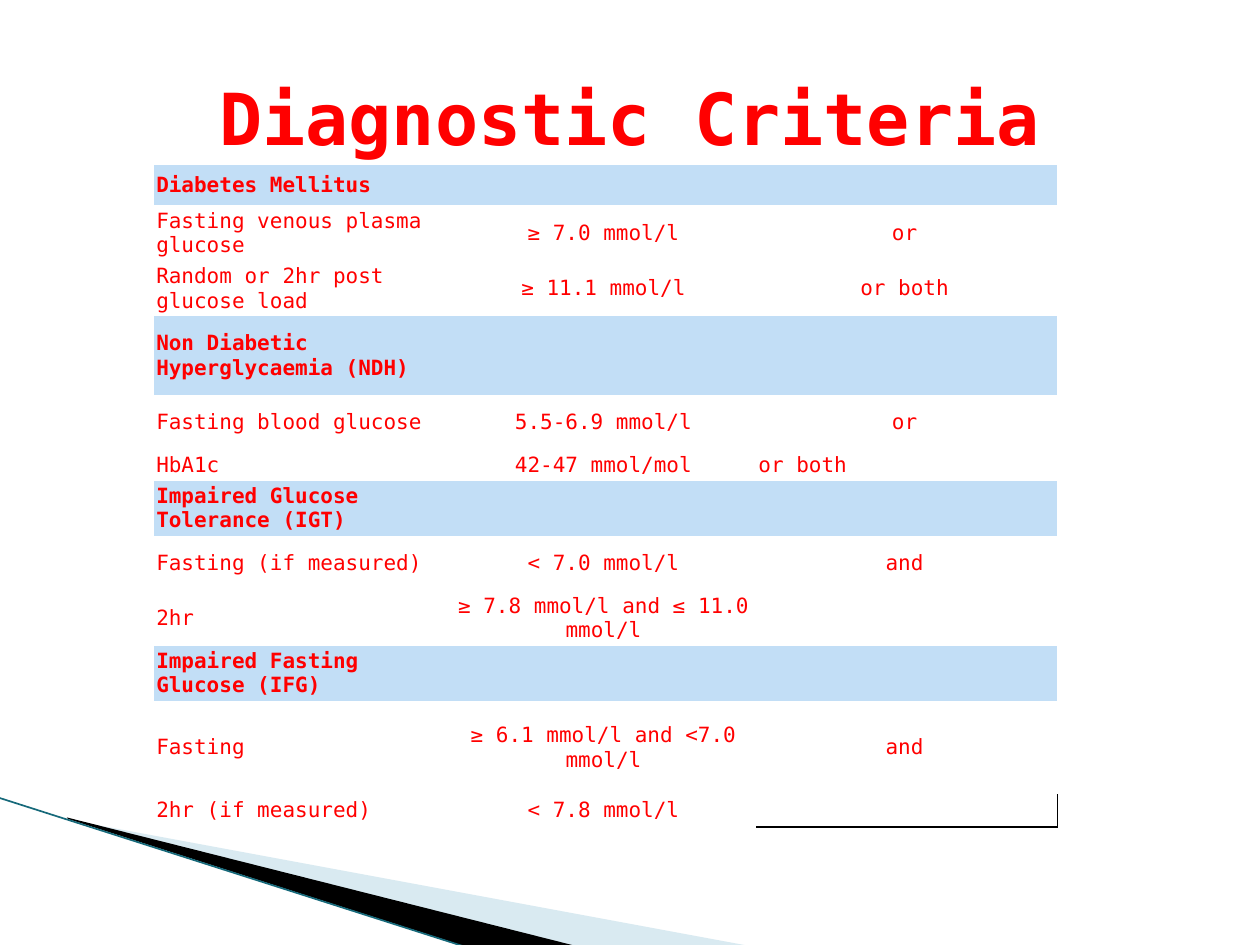
from dataclasses import dataclass

from lxml.etree import SubElement
from pptx import Presentation
from pptx.dml.color import RGBColor
from pptx.enum.shapes import MSO_CONNECTOR
from pptx.enum.text import MSO_ANCHOR, PP_ALIGN
from pptx.oxml.ns import qn
from pptx.util import Cm, Pt

NO_GRID_STYLE = "{2D5ABB26-0587-4C30-8999-92F81FD0307C}"


@dataclass(frozen=True)
class Theme:
    font: str = "DejaVu Sans Mono"
    title_size: float = 41
    body_size: float = 12
    text: str = "FF0000"
    section: str = "C2DEF6"
    plain: str = "FFFFFF"
    dark: str = "000000"
    wedge: str = "A0CBDC"
    edge: str = "16697A"


class SlideBuilder:
    def __init__(self, slide, theme):
        self.slide = slide
        self.theme = theme

    def style(self, paragraph, size, bold=False, align=PP_ALIGN.LEFT):
        paragraph.alignment = align
        font = paragraph.font
        font.name, font.size, font.bold = self.theme.font, Pt(size), bold
        font.color.rgb = RGBColor.from_string(self.theme.text)

    def wedge(self, points, color, opacity=100):
        start, *rest = [(Cm(x), Cm(y)) for x, y in points]
        builder = self.slide.shapes.build_freeform(*start)
        builder.add_line_segments(rest, close=True)
        wedge = builder.convert_to_shape()
        wedge.shadow.inherit = False
        wedge.line.fill.background()
        wedge.fill.solid()
        wedge.fill.fore_color.rgb = RGBColor.from_string(color)
        if opacity < 100:
            tint = next(wedge.fill._xPr.iter(qn("a:srgbClr")))
            SubElement(tint, qn("a:alpha"), val=str(opacity * 1000))

    def line(self, start, end, color, width):
        ends = [Cm(value) for value in (*start, *end)]
        line = self.slide.shapes.add_connector(MSO_CONNECTOR.STRAIGHT, *ends)
        line.line.color.rgb = RGBColor.from_string(color)
        line.line.width = Pt(width)
        SubElement(line._element.spPr, qn("a:effectLst"))

    def title(self, text, left, top, width, height):
        box = self.slide.shapes.add_textbox(Cm(left), Cm(top), Cm(width), Cm(height))
        frame = box.text_frame
        frame.word_wrap = True
        frame.vertical_anchor = MSO_ANCHOR.MIDDLE
        frame.text = text
        self.style(frame.paragraphs[0], self.theme.title_size, True, PP_ALIGN.CENTER)

    def table(self, rows, left, top, column_width, heights):
        """Rows with a single text are section headings."""
        columns = max(map(len, rows))
        table = self.slide.shapes.add_table(
            len(rows), columns, Cm(left), Cm(top),
            Cm(column_width * columns), Cm(sum(heights))).table
        table.first_row = table.horz_banding = False
        next(table._tbl.iter(qn("a:tableStyleId"))).text = NO_GRID_STYLE
        for column in table.columns:
            column.width = Cm(column_width)
        for r, (texts, height) in enumerate(zip(rows, heights)):
            table.rows[r].height = Cm(height)
            heading = len(texts) == 1
            for c in range(columns):
                text = texts[c] if c < len(texts) else ""
                self.cell(table.cell(r, c), text, heading, centred=c > 0)
        return table

    def cell(self, cell, text, heading, centred):
        cell.margin_left = cell.margin_top = cell.margin_bottom = Cm(0.05)
        cell.margin_right = Cm(0.13)
        cell.vertical_anchor = MSO_ANCHOR.MIDDLE
        cell.fill.solid()
        fill = self.theme.section if heading else self.theme.plain
        cell.fill.fore_color.rgb = RGBColor.from_string(fill)
        cell.text = text
        paragraph = cell.text_frame.paragraphs[0]
        if text:
            align = PP_ALIGN.CENTER if centred else PP_ALIGN.LEFT
            self.style(paragraph, self.theme.body_size, heading, align)
        else:
            # An empty cell takes its line height from the end mark
            SubElement(paragraph._p, qn("a:endParaRPr"), sz=str(self.theme.body_size * 100))

    def borders(self, cell, widths):
        properties = cell._tc.get_or_add_tcPr()
        for position, (side, width) in enumerate(widths.items()):
            border = SubElement(properties, qn(f"a:{side}"), w=str(Pt(width)))
            fill = SubElement(border, qn("a:solidFill"))
            SubElement(fill, qn("a:srgbClr"), val=self.theme.dark)
            properties.insert(position, border)


CRITERIA = [
    ["Diabetes Mellitus"],
    ["Fasting venous plasma glucose", "≥ 7.0 mmol/l", "or"],
    ["Random or 2hr post glucose load", "≥ 11.1 mmol/l", "or both"],
    ["Non Diabetic Hyperglycaemia (NDH)"],
    ["Fasting blood glucose", "5.5-6.9 mmol/l", "or"],
    ["HbA1c", "42-47 mmol/mol", "or both"],
    ["Impaired Glucose Tolerance (IGT)"],
    ["Fasting (if measured)", "< 7.0 mmol/l", "and"],
    ["2hr", "≥ 7.8 mmol/l and ≤ 11.0 mmol/l"],
    ["Impaired Fasting Glucose (IFG)"],
    ["Fasting", "≥ 6.1 mmol/l and <7.0 mmol/l", "and"],
    ["2hr (if measured)", "< 7.8 mmol/l"],
]
ROW_HEIGHTS = [0.81, 1.12, 1.12, 1.59, 1.1, 0.62, 1.11, 1.1, 1.12, 1.11, 1.88, 0.66]
HBA1C_ROW = 5


def main():
    presentation = Presentation()
    presentation.slide_width, presentation.slide_height = Cm(25.4), Cm(19.05)
    theme = Theme()
    slide = presentation.slides.add_slide(presentation.slide_layouts[6])
    builder = SlideBuilder(slide, theme)

    builder.wedge([(1.4, 16.53), (15.11, 19.07), (11.58, 19.07), (1.4, 16.51)], theme.wedge, 40)
    builder.wedge([(1.35, 16.48), (11.61, 19.07), (9.45, 19.1), (1.37, 16.51)], theme.dark)
    builder.line((-0.03, 16.08), (9.42, 19.1), theme.edge, 0.95)

    criteria = builder.table(CRITERIA, 3.1, 3.33, 6.07, ROW_HEIGHTS)
    criteria.cell(HBA1C_ROW, 2).text_frame.paragraphs[0].alignment = PP_ALIGN.LEFT
    last_cell = criteria.cell(len(CRITERIA) - 1, 2)
    last_cell.fill.background()
    builder.borders(last_cell, {"lnR": 0.75, "lnB": 1.5})

    builder.title("Diagnostic Criteria", 1.27, 0.76, 22.86, 3.18)
    presentation.save("out.pptx")


if __name__ == "__main__":
    main()
